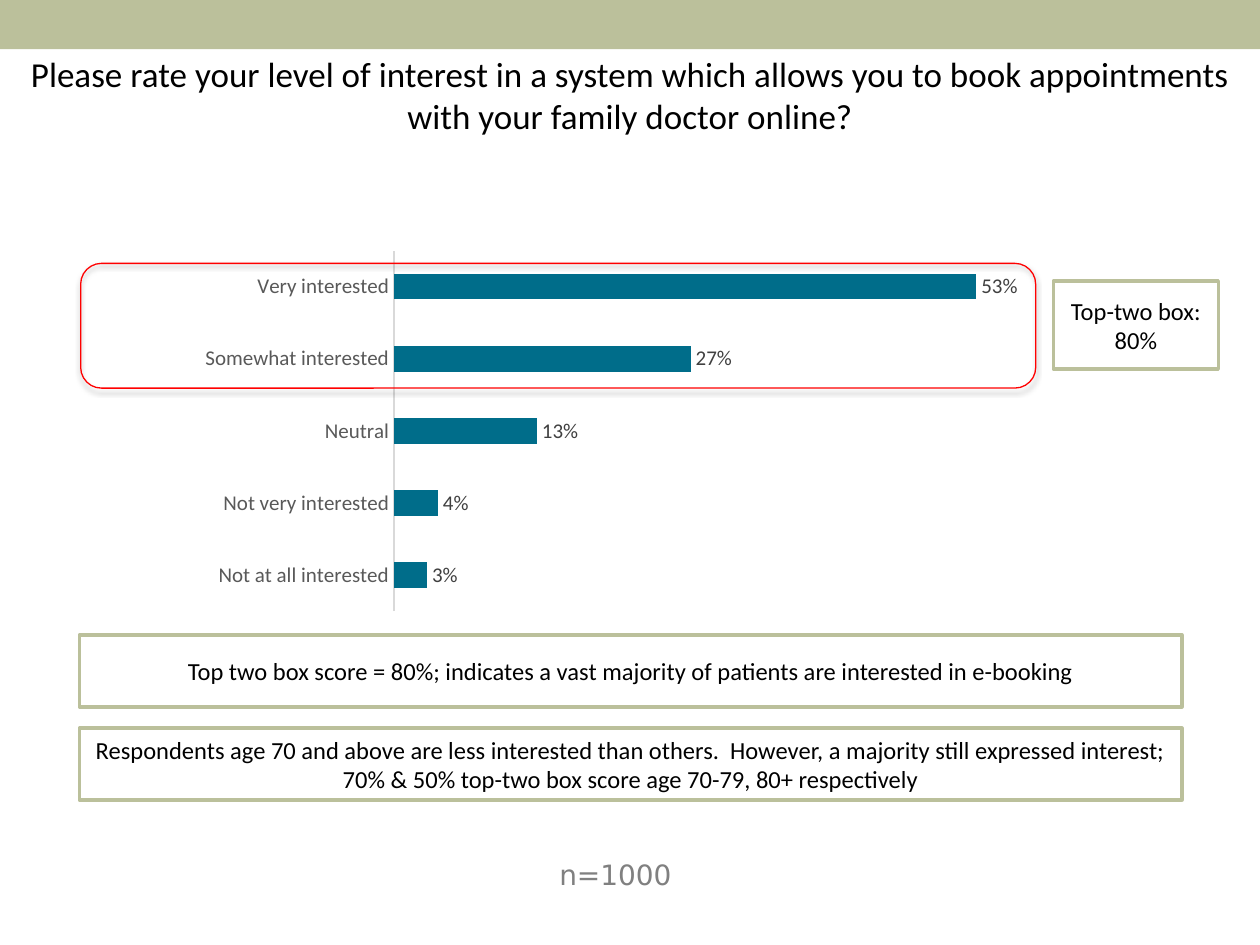
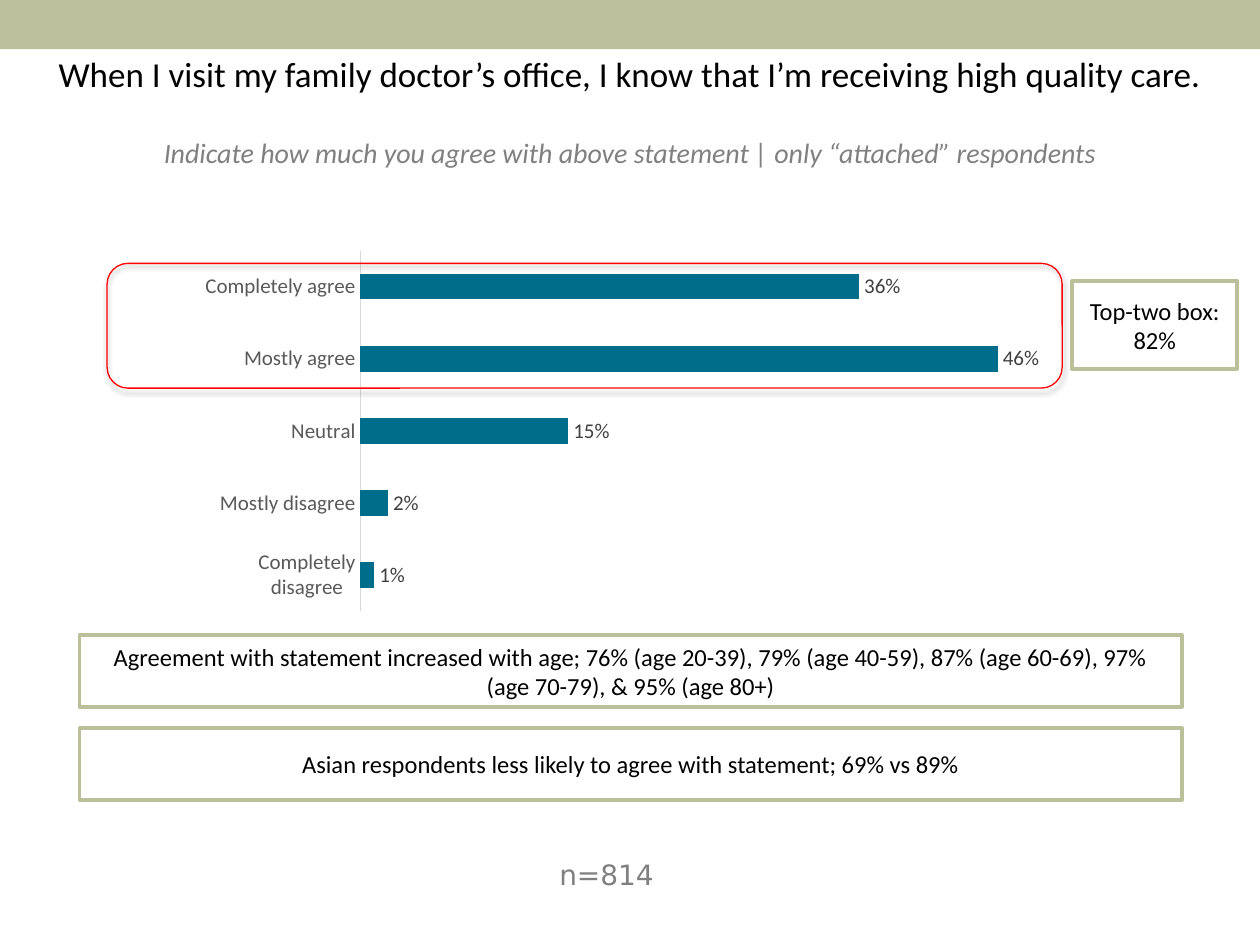
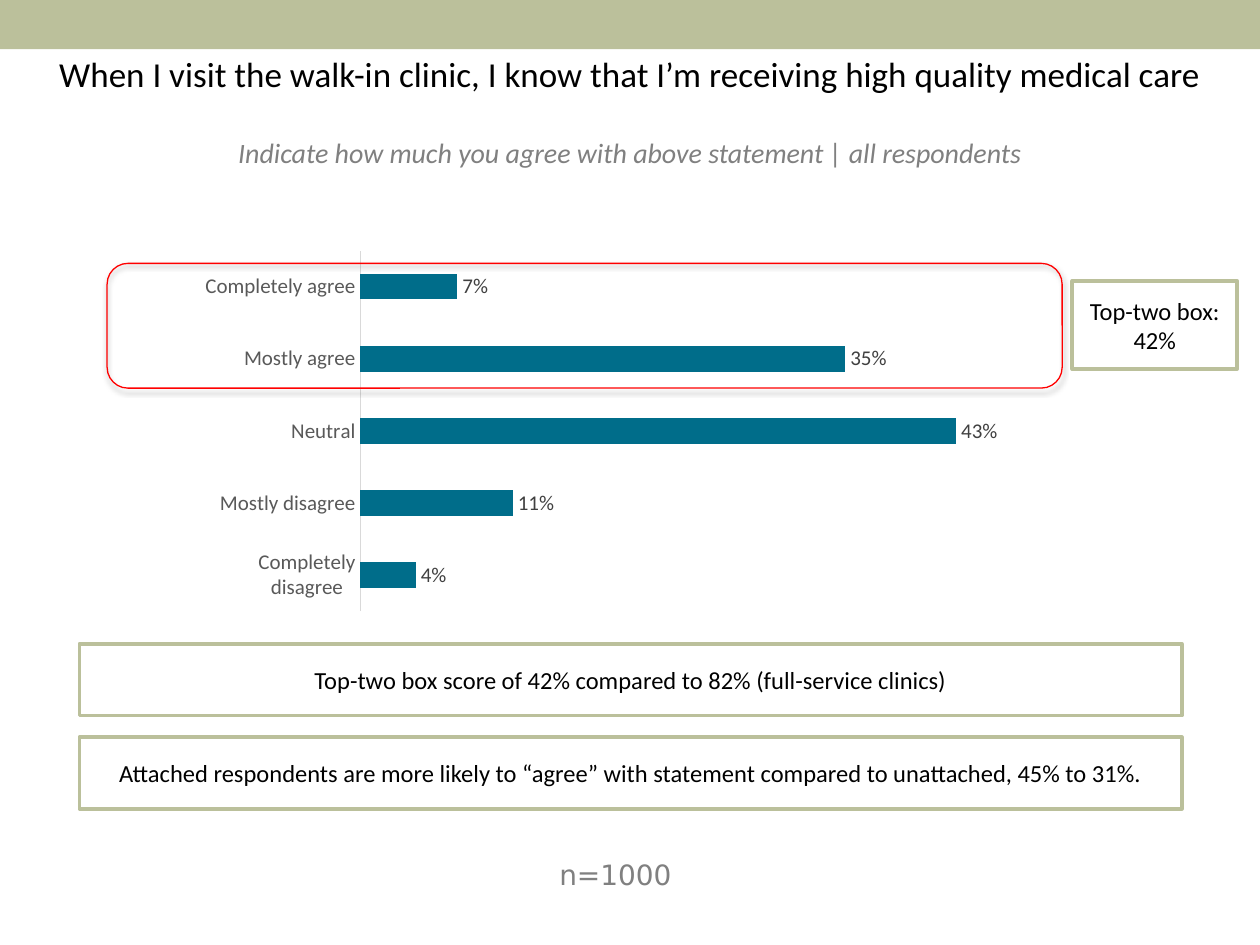
from dataclasses import dataclass

from lxml import etree
from pptx import Presentation
from pptx.chart.data import CategoryChartData
from pptx.dml.color import RGBColor
from pptx.enum import chart as ch, shapes, text
from pptx.oxml import ns
from pptx.util import Inches, Pt

# Content
AGREEMENT = ["Completely agree", "Mostly agree", "Neutral",
             "Mostly disagree", "Completely disagree"]
INTEREST = ["Very interested", "Somewhat interested", "Neutral",
            "Not very interested", "Not at all interested"]

SLIDES = [
    dict(title="Please rate your level of interest in a system which allows you "
               "to book appointments with your family doctor online?",
         subtitle=None, sample="n=1000",
         answers=INTEREST, shares=[0.53, 0.27, 0.13, 0.04, 0.03],
         top_two="80%", frame_left=0.64, callout_left=8.36, findings_top=5.04,
         findings=["Top two box score = 80%; indicates a vast majority of patients "
                   "are interested in e-booking",
                   "Respondents age 70 and above are less interested than others.  "
                   "However, a majority still expressed interest; 70% & 50% top-two "
                   "box score age 70-79, 80+ respectively"]),
    dict(title="When I visit my family doctor’s office, I know that I’m receiving "
               "high quality care.",
         subtitle="Indicate how much you agree with above statement | "
                  "only “attached” respondents",
         sample="n=814",
         answers=AGREEMENT, shares=[0.36, 0.46, 0.15, 0.02, 0.01],
         top_two="82%", frame_left=0.85, callout_left=8.51, findings_top=5.04,
         findings=["Agreement with statement increased with age; 76% (age 20-39), "
                   "79% (age 40-59), 87% (age 60-69), 97% (age 70-79), "
                   "& 95% (age 80+)",
                   "Asian respondents less likely to agree with statement; "
                   "69% vs 89%"]),
    dict(title="When I visit the walk-in clinic, I know that I’m receiving high "
               "quality medical care",
         subtitle="Indicate how much you agree with above statement | "
                  "all respondents",
         sample="n=1000",
         answers=AGREEMENT, shares=[0.07, 0.35, 0.43, 0.11, 0.04],
         top_two="42%", frame_left=0.85, callout_left=8.51, findings_top=5.11,
         findings=["Top-two box score of 42% compared to 82% (full-service clinics)",
                   "Attached respondents are more likely to “agree” with statement "
                   "compared to unattached, 45% to 31%."]),
]


# Theme
@dataclass(frozen=True)
class Theme:
    sage: RGBColor = RGBColor.from_string("BBC09B")
    teal: RGBColor = RGBColor.from_string("006D8A")
    red: RGBColor = RGBColor.from_string("FF0000")
    black: RGBColor = RGBColor.from_string("000000")
    white: RGBColor = RGBColor.from_string("FFFFFF")
    grey: RGBColor = RGBColor.from_string("808080")
    axis_text: RGBColor = RGBColor.from_string("595959")
    axis_line: RGBColor = RGBColor.from_string("D9D9D9")
    label_text: RGBColor = RGBColor.from_string("404040")
    body_font: str = "Calibri"
    sample_font: str = "DejaVu Sans"
    title_size: int = 20
    note_size: int = 16
    box_size: int = 14
    chart_size: int = 12


T = Theme()
FINDING_STEP = 0.74


def box(*lengths):
    return [Inches(n) for n in lengths]


def style(font, size, color, name=T.body_font, italic=None):
    font.name, font.size, font.italic = name, Pt(size), italic
    font.color.rgb = color


def write(tf, words, size, color, align=text.PP_ALIGN.CENTER,
          anchor=text.MSO_ANCHOR.TOP, **font):
    tf.word_wrap = True
    tf.auto_size = text.MSO_AUTO_SIZE.NONE
    tf.vertical_anchor = anchor
    tf.text = words
    p = tf.paragraphs[0]
    p.alignment = align
    style(p.font, size, color, **font)


def add_note(s, at, words, **options):
    write(s.shapes.add_textbox(*box(*at)).text_frame, words,
          T.note_size, T.grey, **options)


def add_panel(s, at, words):
    sp = s.shapes.add_shape(shapes.MSO_SHAPE.RECTANGLE, *box(*at))
    sp.shadow.inherit = False
    sp.fill.solid()
    sp.fill.fore_color.rgb = T.white
    sp.line.color.rgb = T.sage
    sp.line.width = Pt(2)
    write(sp.text_frame, words, T.box_size, T.black,
          anchor=text.MSO_ANCHOR.MIDDLE)


def add_top_two_frame(s, left):
    sp = s.shapes.add_shape(shapes.MSO_SHAPE.ROUNDED_RECTANGLE,
                            *box(left, 2.09, 7.58, 0.99))
    sp.fill.background()
    sp.line.color.rgb = T.red
    sp.line.width = Pt(0.75)
    # Soft shadow below the frame
    sp.shadow.inherit = False
    effects = sp._element.spPr.find(ns.qn("a:effectLst"))
    shadow = etree.SubElement(effects, ns.qn("a:outerShdw"),
                              blurRad=str(Pt(3.1)), dist=str(Pt(1.8)),
                              dir="5400000", rotWithShape="0")
    color = etree.SubElement(shadow, ns.qn("a:srgbClr"), val=str(T.black))
    etree.SubElement(color, ns.qn("a:alpha"), val="35000")


def add_share_chart(s, answers, shares):
    data = CategoryChartData(number_format="0%")
    data.categories = answers
    data.add_series("Series 1", shares)
    chart = s.shapes.add_chart(ch.XL_CHART_TYPE.BAR_CLUSTERED,
                               *box(1.49, 1.93, 7.01, 2.98), data).chart
    chart.has_legend = chart.has_title = False
    style(chart.font, 10, T.black)

    axis = chart.category_axis
    axis.reverse_order = True
    axis.major_tick_mark = axis.minor_tick_mark = ch.XL_TICK_MARK.NONE
    axis.format.line.color.rgb = T.axis_line
    axis.format.line.width = Pt(0.75)
    style(axis.tick_labels.font, T.chart_size, T.axis_text)
    chart.value_axis.has_major_gridlines = False
    chart.value_axis.visible = False

    plot = chart.plots[0]
    plot.gap_width = 182
    plot.vary_by_categories = False
    fill = plot.series[0].format.fill
    fill.solid()
    fill.fore_color.rgb = T.teal
    labels = plot.series[0].data_labels
    labels.show_value = True
    labels.number_format = "0%"
    labels.number_format_is_linked = False
    labels.position = ch.XL_LABEL_POSITION.OUTSIDE_END
    style(labels.font, T.chart_size, T.label_text)


def add_band(prs, layout, s):
    """Draw the top band, then hand it to the layout that every slide uses."""
    sp = s.shapes.add_shape(shapes.MSO_SHAPE.RECTANGLE, 0, 0,
                            prs.slide_width, Inches(0.39))
    sp.shadow.inherit = False
    sp.fill.solid()
    sp.fill.fore_color.rgb = T.sage
    sp.line.fill.background()
    layout.shapes._spTree.append(sp._element)


def build_slide(s, c):
    title = s.shapes.title
    title.left, title.top, title.width, title.height = box(0, 0.37, 10, 0.45)
    write(title.text_frame, c["title"], T.title_size, T.black)
    if c["subtitle"]:
        add_note(s, (0, 1.03, 10, 0.45), c["subtitle"], italic=True)
    add_note(s, (4.34, 6.76, 1.32, 0.35), c["sample"],
             align=text.PP_ALIGN.LEFT, name=T.sample_font)
    add_share_chart(s, c["answers"], c["shares"])
    for i, finding in enumerate(c["findings"]):
        top = c["findings_top"] + i * FINDING_STEP
        add_panel(s, (0.63, top, 8.75, 0.57), finding)
    add_top_two_frame(s, c["frame_left"])
    add_panel(s, (c["callout_left"], 2.23, 1.31, 0.7),
              f"Top-two box: {c['top_two']}")


def main():
    prs = Presentation()
    prs.slide_width, prs.slide_height = box(10, 7.5)
    layout = prs.slide_layouts[5]
    for i, content in enumerate(SLIDES):
        s = prs.slides.add_slide(layout)
        if i == 0:
            add_band(prs, layout, s)
        build_slide(s, content)
    prs.save("out.pptx")


if __name__ == "__main__":
    main()
